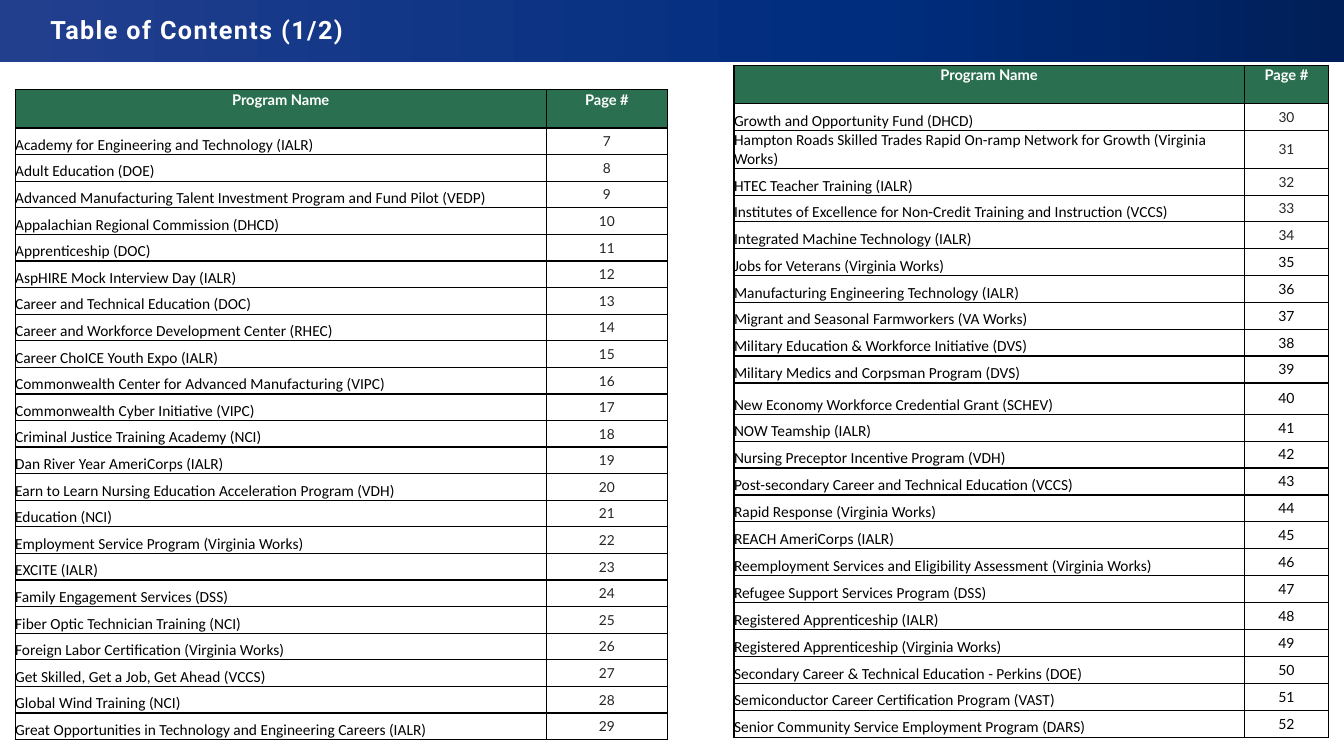
from copy import deepcopy

from lxml import etree
from pptx import Presentation, util as u
from pptx.dml.color import RGBColor
from pptx.enum import shapes, text
from pptx.oxml.ns import qn

LEFT_PROGRAMS = [
    "Academy for Engineering and Technology (IALR)",
    "Adult Education (DOE)",
    "Advanced Manufacturing Talent Investment Program and Fund Pilot (VEDP)",
    "Appalachian Regional Commission (DHCD)",
    "Apprenticeship (DOC)",
    "AspHIRE Mock Interview Day (IALR)",
    "Career and Technical Education (DOC)",
    "Career and Workforce Development Center (RHEC)",
    "Career ChoICE Youth Expo (IALR)",
    "Commonwealth Center for Advanced Manufacturing (VIPC)",
    "Commonwealth Cyber Initiative (VIPC)",
    "Criminal Justice Training Academy (NCI)",
    "Dan River Year AmeriCorps (IALR)",
    "Earn to Learn Nursing Education Acceleration Program (VDH)",
    "Education (NCI)",
    "Employment Service Program (Virginia Works)",
    "EXCITE (IALR)",
    "Family Engagement Services (DSS)",
    "Fiber Optic Technician Training (NCI)",
    "Foreign Labor Certification (Virginia Works)",
    "Get Skilled, Get a Job, Get Ahead (VCCS)",
    "Global Wind Training (NCI)",
    "Great Opportunities in Technology and Engineering Careers (IALR)",
]

RIGHT_PROGRAMS = [
    "Growth and Opportunity Fund (DHCD)",
    "Hampton Roads Skilled Trades Rapid On-ramp Network for Growth (Virginia Works)",
    "HTEC Teacher Training (IALR)",
    "Institutes of Excellence for Non-Credit Training and Instruction (VCCS)",
    "Integrated Machine Technology (IALR)",
    "Jobs for Veterans (Virginia Works)",
    "Manufacturing Engineering Technology (IALR)",
    "Migrant and Seasonal Farmworkers (VA Works)",
    "Military Education & Workforce Initiative (DVS)",
    "Military Medics and Corpsman Program (DVS)",
    "New Economy Workforce Credential Grant (SCHEV)",
    "NOW Teamship (IALR)",
    "Nursing Preceptor Incentive Program (VDH)",
    "Post-secondary Career and Technical Education (VCCS)",
    "Rapid Response (Virginia Works)",
    "REACH AmeriCorps (IALR)",
    "Reemployment Services and Eligibility Assessment (Virginia Works)",
    "Refugee Support Services Program (DSS)",
    "Registered Apprenticeship (IALR)",
    "Registered Apprenticeship (Virginia Works)",
    "Secondary Career & Technical Education - Perkins (DOE)",
    "Semiconductor Career Certification Program (VAST)",
    "Senior Community Service Employment Program (DARS)",
]

FIRST_PAGE = 7
FIRST_BLACK_PAGE = 35
HEADER_HEIGHT, ROW_HEIGHT = 0.38, 0.26
TALL_ROWS = {31: 0.38, 40: 0.31}  # by page number
CENTER = text.PP_ALIGN.CENTER
TOP, MIDDLE, BOTTOM = (text.MSO_ANCHOR.TOP, text.MSO_ANCHOR.MIDDLE,
                       text.MSO_ANCHOR.BOTTOM)


def rgb(color):
    return RGBColor.from_string(color)


def style_run(r, font, size, color, bold=False):
    r.font.name, r.font.size, r.font.bold = font, u.Pt(size), bold
    r.font.color.rgb = rgb(color)


def add_title_bar(s, x, y, w, h):
    """Gradient band with the slide title on top of it."""
    bar = s.shapes.add_shape(shapes.MSO_SHAPE.RECTANGLE, *map(u.Inches, (x, y, w, h)))
    bar.shadow.inherit = False
    bar.line.fill.background()
    bar.fill.gradient()
    bar.fill.gradient_angle = 180
    last_stop = list(bar._element.iter(qn("a:gs")))[-1]
    last_stop.addprevious(deepcopy(last_stop))
    stops = ((0, "001F58"), (0.35, "002D7E"), (1, "223F8E"))
    for stop, (position, color) in zip(bar.fill.gradient_stops, stops):
        stop.position, stop.color.rgb = position, rgb(color)
    s.shapes._spTree.insert(2, bar._element)

    title = s.shapes.title
    title.left, title.top = u.Inches(x + 0.4), u.Inches(y + 0.06)
    title.width, title.height = u.Inches(11.5), u.Inches(0.51)
    tf = title.text_frame
    tf.text = "Table of Contents (1/2)"
    tf.auto_size = text.MSO_AUTO_SIZE.NONE
    tf.vertical_anchor = MIDDLE
    p = tf.paragraphs[0]
    p.alignment, p.line_spacing = text.PP_ALIGN.LEFT, 0.9
    style_run(p.runs[0], "Roboto", 18, "FFFFFF", bold=True)
    p.runs[0]._r.get_or_add_rPr().set("spc", "100")


def add_borders(cell):
    tcPr = cell._tc.get_or_add_tcPr()
    for side in "LRTB":
        ln = etree.SubElement(tcPr, qn(f"a:ln{side}"), w=str(u.Pt(1)))
        fill = etree.SubElement(ln, qn("a:solidFill"))
        etree.SubElement(fill, qn("a:srgbClr"), val="000000")


def fill_cell(cell, value, font, size, color, anchor, align=None, margins=None,
              fill=None, bold=False):
    add_borders(cell)
    if fill:
        cell.fill.solid()
        cell.fill.fore_color.rgb = rgb(fill)
    else:
        cell.fill.background()
    if margins:
        (cell.margin_left, cell.margin_top, cell.margin_right,
         cell.margin_bottom) = map(u.Inches, margins)
    cell.vertical_anchor = anchor
    cell.text = value
    p = cell.text_frame.paragraphs[0]
    p.alignment = align
    style_run(p.runs[0], font, size, color, bold)


def add_contents_table(s, x, y, widths, programs, first_page):
    pages = range(first_page, first_page + len(programs))
    heights = [HEADER_HEIGHT] + [TALL_ROWS.get(n, ROW_HEIGHT) for n in pages]
    table = s.shapes.add_table(len(heights), 2, u.Inches(x), u.Inches(y),
                               u.Inches(sum(widths)), u.Inches(sum(heights))).table
    table.first_row = table.horz_banding = False
    for column, width in zip(table.columns, widths):
        column.width = u.Inches(width)
    for row, height in zip(table.rows, heights):
        row.height = u.Inches(height)
    for i, heading in enumerate(("Program Name", "Page #")):
        fill_cell(table.cell(0, i), heading, "Lato", 10.5, "FFFFFF", TOP, CENTER,
                  (0.01, 0.01, 0.01, 0), "2A7050", bold=True)
    for i, (program, page) in enumerate(zip(programs, pages), 1):
        fill_cell(table.cell(i, 0), program, "Calibri", 11, "000000", BOTTOM,
                  margins=(0, 0, 0, 0))
        size, color = (10, "000000") if page >= FIRST_BLACK_PAGE else (9.8, "242424")
        fill_cell(table.cell(i, 1), str(page), "Lato", size, color, MIDDLE, CENTER)


def main():
    prs = Presentation()
    prs.slide_width, prs.slide_height = u.Inches(13.33), u.Inches(7.5)
    s = prs.slides.add_slide(prs.slide_layouts[5])
    add_title_bar(s, 0, 0, 13.33, 0.62)
    add_contents_table(s, 0.15, 0.89, (5.27, 1.2), LEFT_PROGRAMS, FIRST_PAGE)
    add_contents_table(s, 7.28, 0.65, (5.06, 0.84), RIGHT_PROGRAMS,
                       FIRST_PAGE + len(LEFT_PROGRAMS))
    prs.save("out.pptx")


if __name__ == "__main__":
    main()
